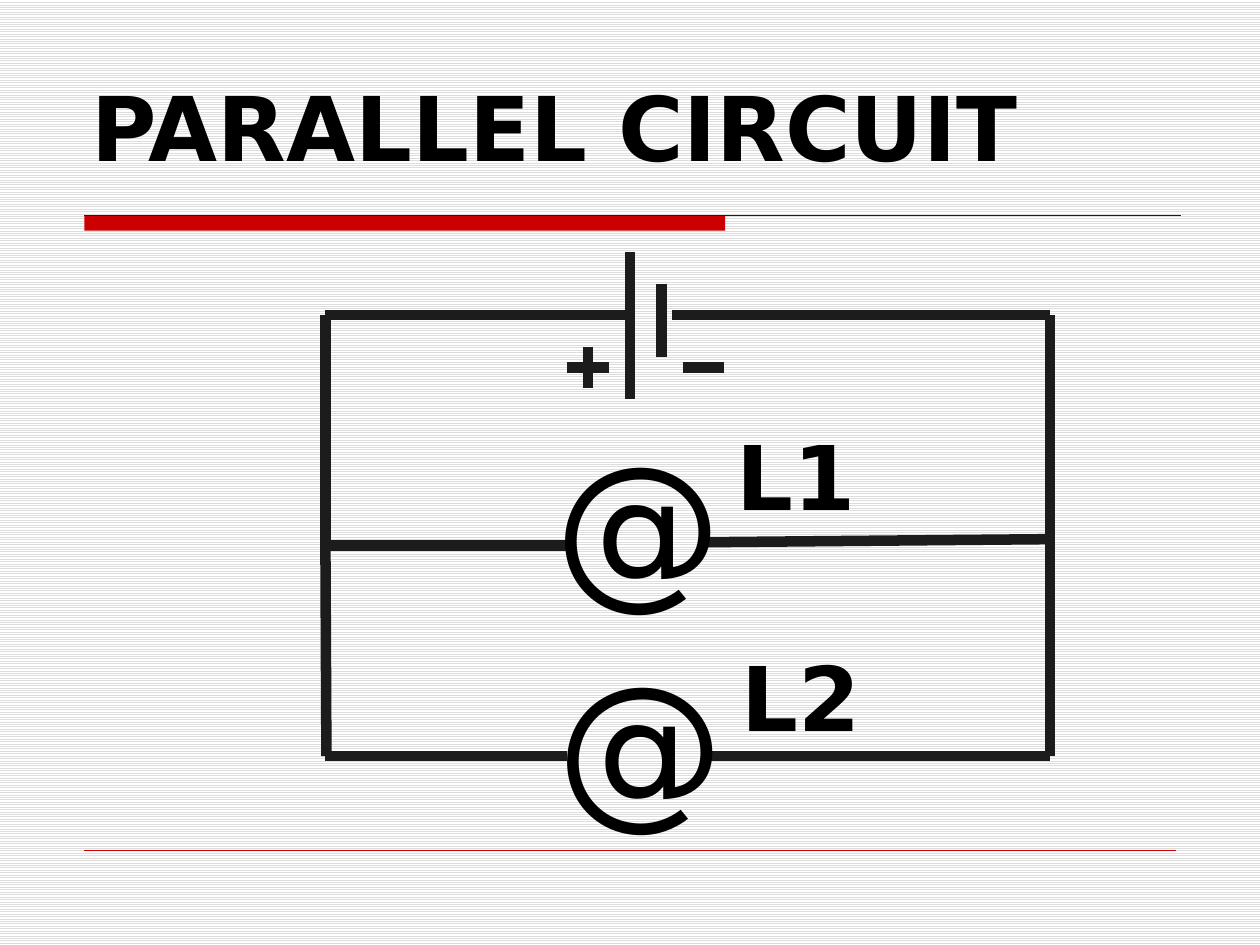
from lxml import etree
from pptx import Presentation
from pptx.dml.color import RGBColor
from pptx.enum.dml import MSO_PATTERN
from pptx.enum.shapes import MSO_CONNECTOR, MSO_SHAPE
from pptx.enum.text import MSO_ANCHOR, MSO_AUTO_SIZE
from pptx.oxml.ns import qn
from pptx.util import Cm, Pt

STRAIGHT = MSO_CONNECTOR.STRAIGHT
RECTANGLE = MSO_SHAPE.RECTANGLE
LIGHT_HORIZONTAL = MSO_PATTERN.LIGHT_HORIZONTAL
TOP, MIDDLE = MSO_ANCHOR.TOP, MSO_ANCHOR.MIDDLE
GROW, FIXED = MSO_AUTO_SIZE.SHAPE_TO_FIT_TEXT, MSO_AUTO_SIZE.NONE

BLACK = RGBColor(0x00, 0x00, 0x00)
WHITE = RGBColor(0xFF, 0xFF, 0xFF)
STRIPE = RGBColor(0xDD, 0xDD, 0xDD)
WIRE = RGBColor(0x1C, 0x1C, 0x1C)
RED = RGBColor(0xCC, 0x00, 0x00)
FONT = "DejaVu Sans"

TITLE = "PARALLEL CIRCUIT"
LAMP = "@"
LAMPS = [("L1", 10.92, 8.31, 14.6, 8.36), ("L2", 10.97, 12.75, 14.7, 12.83)]

LEFT, RIGHT = 6.56, 21.17
UPPER, BRANCH, LOWER = 6.35, 11, 15.24
CELL_PLUS, CELL_MINUS = 12.7, 13.34
SIGN_Y, SIGN_SIZE = 7.41, 0.84
PLUS_X, MINUS_X = 11.85, 14.18

WIRES = [
    (LEFT, UPPER, CELL_PLUS, UPPER),
    (13.55, UPPER, RIGHT, UPPER),
    (LEFT, UPPER, LEFT, BRANCH),
    (LEFT, BRANCH, 6.58, LOWER),
    (RIGHT, UPPER, RIGHT, LOWER),
    (LEFT, BRANCH, 11.43, BRANCH),
    (14.27, 10.93, 21.11, 10.87),
    (LEFT, LOWER, 11.43, LOWER),
    (14.18, LOWER, RIGHT, LOWER),
]
BATTERY = [
    (CELL_PLUS, 5.08, CELL_PLUS, 8.04),
    (CELL_MINUS, 5.72, CELL_MINUS, 7.19),
]
SIGNS = [
    (PLUS_X - SIGN_SIZE / 2, SIGN_Y, PLUS_X + SIGN_SIZE / 2, SIGN_Y),
    (PLUS_X, SIGN_Y - SIGN_SIZE / 2, PLUS_X, SIGN_Y + SIGN_SIZE / 2),
    (MINUS_X - SIGN_SIZE / 2, SIGN_Y, MINUS_X + SIGN_SIZE / 2, SIGN_Y),
]


def add_line(page, ends, color=WIRE, width=6):
    line = page.shapes.add_connector(STRAIGHT, *(Cm(value) for value in ends))
    line.line.color.rgb = color
    line.line.width = Pt(width)
    properties = line._element.find(qn("p:spPr"))
    etree.SubElement(properties, qn("a:effectLst"))


def add_text(page, text, place, size=51, bold=True, wrap=True, anchor=TOP, fit=GROW):
    box = page.shapes.add_textbox(*(Cm(value) for value in place))
    frame = box.text_frame
    frame.word_wrap = wrap
    frame.auto_size = fit
    frame.vertical_anchor = anchor
    span = frame.paragraphs[0].add_run()
    span.text = text
    span.font.name = FONT
    span.font.size = Pt(size)
    span.font.bold = bold
    span.font.color.rgb = BLACK


def add_bar(page, place, color):
    bar = page.shapes.add_shape(RECTANGLE, *(Cm(value) for value in place))
    bar.shadow.inherit = False
    bar.fill.solid()
    bar.fill.fore_color.rgb = color
    bar.line.fill.background()


def main():
    deck = Presentation()
    deck.slide_width, deck.slide_height = Cm(25.4), Cm(19.05)
    page = deck.slides.add_slide(deck.slide_layouts[6])
    backdrop = page.background.fill
    backdrop.patterned()
    backdrop.pattern = LIGHT_HORIZONTAL
    backdrop.fore_color.rgb = STRIPE
    backdrop.back_color.rgb = WHITE

    add_bar(page, (1.7, 4.34, 12.92, 0.31), RED)
    add_line(page, (1.7, 4.34, 23.8, 4.34), width=0.75)
    add_line(page, (1.7, 17.15, 23.7, 17.15), color=RED, width=0.25)
    add_text(page, TITLE, (1.6, 0.84, 22.23, 3.38), anchor=MIDDLE, fit=FIXED)

    for ends in WIRES + BATTERY + SIGNS:
        add_line(page, ends)
    for name, lamp_x, lamp_y, name_x, name_y in LAMPS:
        add_text(page, LAMP, (lamp_x, lamp_y, 4.09, 4.37), size=96, bold=False)
        add_text(page, name, (name_x, name_y, 2.97, 2.44), wrap=False)

    deck.save("out.pptx")


if __name__ == "__main__":
    main()
